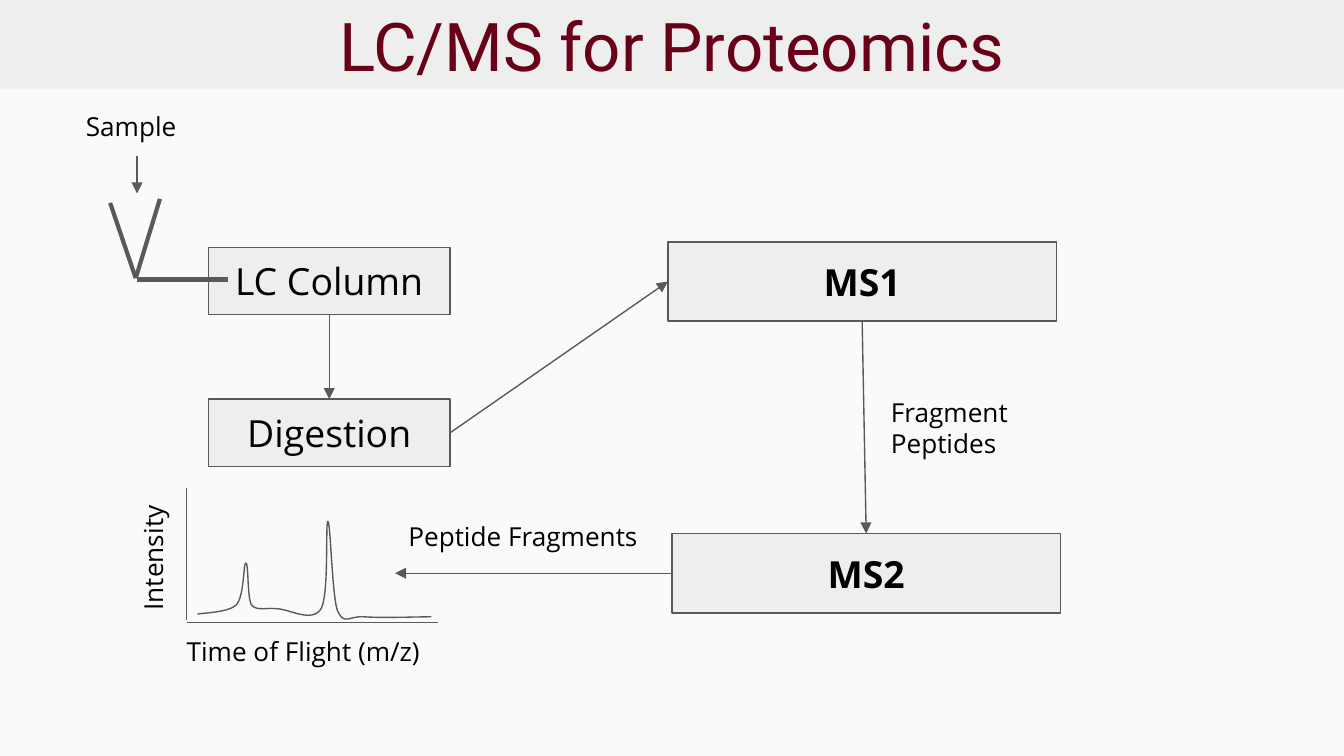
from lxml import etree
from pptx import Presentation
from pptx.dml.color import RGBColor
from pptx.enum.shapes import MSO_CONNECTOR, MSO_SHAPE
from pptx.enum.text import MSO_ANCHOR, PP_ALIGN
from pptx.oxml.ns import qn
from pptx.util import Inches, Pt

STRAIGHT = MSO_CONNECTOR.STRAIGHT
RECT = MSO_SHAPE.RECTANGLE
MIDDLE, TOP = MSO_ANCHOR.MIDDLE, MSO_ANCHOR.TOP
CENTER, LEFT = PP_ALIGN.CENTER, PP_ALIGN.LEFT
TOP_SIDE, LEFT_SIDE, BOTTOM_SIDE, RIGHT_SIDE = range(4)

COLORS = {
    "background": "FAFAFA",
    "panel": "EEEEEE",
    "line": "595959",
    "title": "680018",
    "text": "000000",
}

SPECTRUM_START = (1.47, 4.57)
SPECTRUM_CURVES = [
    ((1.51, 4.56), (1.7, 4.56), (1.76, 4.5)),
    ((1.82, 4.43), (1.81, 4.19), (1.83, 4.19)),
    ((1.85, 4.19), (1.84, 4.44), (1.87, 4.5)),
    ((1.91, 4.55), (1.98, 4.52), (2.06, 4.53)),
    ((2.15, 4.53), (2.32, 4.64), (2.39, 4.53)),
    ((2.45, 4.42), (2.42, 3.88), (2.44, 3.88)),
    ((2.46, 3.88), (2.47, 4.42), (2.51, 4.54)),
    ((2.56, 4.66), (2.6, 4.58), (2.71, 4.59)),
    ((2.83, 4.6), (3.13, 4.59), (3.21, 4.59)),
]


def color(name):
    return RGBColor.from_string(COLORS[name])


def write(shape, text, size, font="Open Sans", ink="text", bold=False,
          align=LEFT, anchor=TOP):
    tf = shape.text_frame
    tf.word_wrap = True
    tf.vertical_anchor = anchor
    tf.margin_left = tf.margin_right = Inches(0.1)
    tf.margin_top = tf.margin_bottom = Inches(0.1)
    tf.text = text
    for p in tf.paragraphs:
        p.alignment = align
        p.font.name = font
        p.font.size = Pt(size)
        p.font.bold = bold
        p.font.color.rgb = color(ink)


def add_box(s, x, y, w, h, text, size=20, outlined=True, **style):
    box = s.shapes.add_shape(RECT, Inches(x), Inches(y), Inches(w), Inches(h))
    box.shadow.inherit = False
    box.fill.solid()
    box.fill.fore_color.rgb = color("panel")
    if outlined:
        box.line.color.rgb = color("line")
        box.line.width = Pt(0.75)
    else:
        box.line.fill.background()
    write(box, text, size, align=CENTER, anchor=MIDDLE, **style)
    return box


def add_label(s, x, y, w, h, text, rotation=0):
    label = s.shapes.add_textbox(Inches(x), Inches(y), Inches(w), Inches(h))
    label.rotation = rotation
    write(label, text, 14)


def add_line(s, start, end, width=0.75, arrow=False):
    line = s.shapes.add_connector(STRAIGHT, *map(Inches, start + end))
    line.line.color.rgb = color("line")
    line.line.width = Pt(width)
    if arrow:
        ln = line.line._get_or_add_ln()
        etree.SubElement(ln, qn("a:tailEnd"), type="triangle")
    etree.SubElement(line._element.spPr, qn("a:effectLst"))
    return line


def join(s, source, source_side, target, target_side):
    line = add_line(s, (0, 0), (1, 1), arrow=True)
    line.begin_connect(source, source_side)
    line.end_connect(target, target_side)


def bezier(points, t):
    weights = ((1 - t) ** 3, 3 * t * (1 - t) ** 2, 3 * t ** 2 * (1 - t), t ** 3)
    return tuple(Inches(sum(w * p[axis] for w, p in zip(weights, points)))
                 for axis in (0, 1))


def add_spectrum(s, steps=12):
    start, points = SPECTRUM_START, []
    for curve in SPECTRUM_CURVES:
        points += [bezier((start, *curve), i / steps) for i in range(1, steps + 1)]
        start = curve[-1]
    fb = s.shapes.build_freeform(*map(Inches, SPECTRUM_START))
    fb.add_line_segments(points, close=False)
    sp = fb.convert_to_shape()
    sp.shadow.inherit = False
    sp.fill.background()
    sp.line.color.rgb = color("line")
    sp.line.width = Pt(0.75)


def add_funnel(s):
    for start, end in [((1.02, 2.08), (1.7, 2.08)),
                       ((1.01, 2.07), (1.19, 1.48)),
                       ((1.01, 2.07), (0.82, 1.51))]:
        add_line(s, start, end, width=2.25)


def main():
    prs = Presentation()
    prs.slide_width = Inches(10)
    prs.slide_height = Inches(10 * 9 / 16)
    s = prs.slides.add_slide(prs.slide_layouts[6])
    s.background.fill.solid()
    s.background.fill.fore_color.rgb = color("background")

    add_box(s, 0, 0, 10, 0.66, "LC/MS for Proteomics", size=36,
            outlined=False, font="Roboto", ink="title")
    column = add_box(s, 1.55, 1.84, 1.8, 0.5, "LC Column")
    digestion = add_box(s, 1.55, 2.97, 1.8, 0.5, "Digestion")
    ms1 = add_box(s, 4.97, 1.8, 2.89, 0.59, "MS1", bold=True)
    ms2 = add_box(s, 5, 3.97, 2.89, 0.59, "MS2", bold=True)

    add_funnel(s)
    add_line(s, (1.02, 1.16), (1.02, 1.44), arrow=True)
    join(s, column, BOTTOM_SIDE, digestion, TOP_SIDE)
    join(s, digestion, RIGHT_SIDE, ms1, LEFT_SIDE)
    join(s, ms1, BOTTOM_SIDE, ms2, TOP_SIDE)
    to_spectrum = add_line(s, (5, 4.26), (2.94, 4.26), arrow=True)
    to_spectrum.begin_connect(ms2, LEFT_SIDE)
    to_spectrum.end_y = to_spectrum.begin_y

    add_line(s, (1.39, 3.63), (1.39, 4.61))
    add_line(s, (1.39, 4.63), (3.26, 4.63))
    add_spectrum(s)

    add_label(s, 0.54, 0.72, 0.94, 0.44, "Sample")
    add_label(s, 6.53, 2.85, 1.21, 0.67, "Fragment\nPeptides")
    add_label(s, 2.94, 3.77, 2.06, 0.44, "Peptide Fragments")
    add_label(s, 1.29, 4.63, 2.06, 0.44, "Time of Flight (m/z)")
    add_label(s, 0.62, 3.9, 1.04, 0.44, "Intensity", rotation=270)
    prs.save("out.pptx")


if __name__ == "__main__":
    main()
